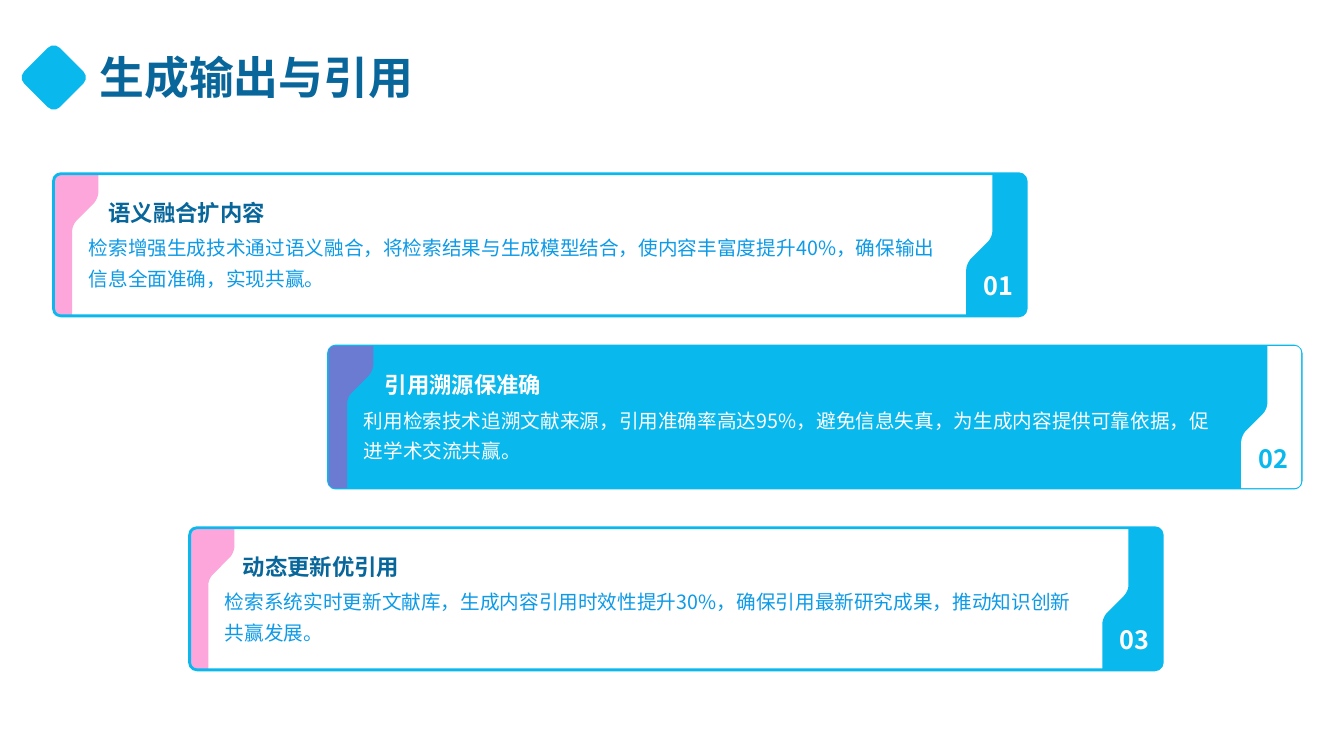
from lxml.etree import SubElement
from pptx import Presentation
from pptx.dml.color import RGBColor
from pptx.enum.shapes import MSO_SHAPE
from pptx.enum.text import MSO_ANCHOR, PP_ALIGN
from pptx.oxml.ns import qn
from pptx.util import Cm, Pt

FONT = "Noto Sans CJK SC"
CYAN = RGBColor(0x09, 0xB8, 0xED)
NAVY = RGBColor(0x08, 0x66, 0x9A)
BLUE = RGBColor(0x0D, 0x9A, 0xE7)
PINK = RGBColor(0xFC, 0x21, 0xA7)
WHITE = RGBColor(0xFF, 0xFF, 0xFF)

TITLE = "生成输出与引用"
# left, top, indent of the heading, solid card, heading, body
CARDS = [
    (1.35, 4.38, 1.14, False, "语义融合扩内容",
     "检索增强生成技术通过语义融合，将检索结果与生成模型结合，使内容丰富度提升40%，确保输出信息全面准确，实现共赢。"),
    (8.28, 8.72, 1.17, True, "引用溯源保准确",
     "利用检索技术追溯文献来源，引用准确率高达95%，避免信息失真，为生成内容提供可靠依据，促进学术交流共赢。"),
    (4.78, 13.3, 1.09, False, "动态更新优引用",
     "检索系统实时更新文献库，生成内容引用时效性提升30%，确保引用最新研究成果，推动知识创新共赢发展。"),
]
WIDE, HIGH = 24.51, 3.58

deck = Presentation()
deck.slide_width, deck.slide_height = Cm(33.87), Cm(19.05)
slide = deck.slides.add_slide(deck.slide_layouts[6])
shapes = slide.shapes


def add_text(text, x, y, w, h, size, color, bold=False,
             anchor=MSO_ANCHOR.MIDDLE, align=PP_ALIGN.LEFT, lines=None, after=None):
    frame = shapes.add_textbox(Cm(x), Cm(y), Cm(w), Cm(h)).text_frame
    frame.word_wrap = True
    frame.vertical_anchor = anchor
    para = frame.paragraphs[0]
    para.alignment = align
    para.line_spacing = lines
    if after:
        para.space_after = Pt(after)
    run = para.add_run()
    run.text = text
    font = run.font
    font.name, font.size, font.bold = FONT, Pt(size), bold
    font.color.rgb = color
    SubElement(run._r.get_or_add_rPr(), qn("a:ea"), typeface=FONT)


def paint(shape, fill=None, line=None, alpha=None):
    shape.shadow.inherit = False
    if fill is None:
        shape.fill.background()
    else:
        shape.fill.solid()
        shape.fill.fore_color.rgb = fill
    if alpha:
        color = shape.fill._xPr.find(".//" + qn("a:srgbClr"))
        SubElement(color, qn("a:alpha"), val=str(alpha * 1000))
    if line is None:
        shape.line.fill.background()
    else:
        shape.line.color.rgb = line
        shape.line.width = Pt(2)


def add_box(x, y, w, h, round_by, **look):
    box = shapes.add_shape(MSO_SHAPE.ROUNDED_RECTANGLE, Cm(x), Cm(y), Cm(w), Cm(h))
    box.adjustments[0] = round_by
    paint(box, **look)
    return box


def curve(a, b, c, d, steps=8):
    """Points along a cubic Bezier curve from a to d."""
    def at(t):
        u = 1 - t
        parts = zip(a, b, c, d)
        return tuple(u**3 * p + 3 * u * u * t * q + 3 * u * t * t * r + t**3 * s
                     for p, q, r, s in parts)
    return [at(i / steps) for i in range(steps + 1)]


def tab_edge(grow, drop):
    """Outline of a tab; grow widens it and drop lowers its slanted step."""
    slim, full = 0.47 + grow, 1.13 + grow
    return [
        *curve((0.17, 0), (0.07, 0), (0, 0.07), (0, 0.17)),
        *curve((0, HIGH - 0.17), (0, HIGH - 0.07), (0.07, HIGH), (0.17, HIGH)),
        (slim, HIGH),
        *curve((slim, 1.45 + drop), (slim, 1.35 + drop),
               (slim + 0.05, 1.24 + drop), (slim + 0.12, 1.17 + drop)),
        *curve((full - 0.11, 0.74 + drop), (full - 0.05, 0.67 + drop),
               (full, 0.55 + drop), (full, 0.46 + drop)),
        (full, 0),
    ]


def add_tab(points, **look):
    spots = [(Cm(x), Cm(y)) for x, y in points]
    pen = shapes.build_freeform(*spots[0])
    pen.add_line_segments(spots[1:], close=True)
    paint(pen.convert_to_shape(), **look)


def add_card(num, x, y, indent, solid, head, body):
    left = [(x + a, y + b) for a, b in tab_edge(0, 0)]
    # The right tab is a wider left tab turned by half a circle.
    right = [(x + WIDE - a, y + HIGH - b) for a, b in tab_edge(0.38, 0.69)]

    if not solid:
        add_tab(left, fill=PINK, alpha=40)
    add_box(x, y, WIDE, HIGH, 0.051, fill=CYAN if solid else None, line=CYAN)
    if solid:
        add_tab(left, fill=PINK, alpha=40)
    add_tab(right, fill=WHITE if solid else CYAN)

    add_text(f"{num:02}", x + 22.99, y + 2.31, 1.65, 1.02, 18,
             CYAN if solid else WHITE, bold=True, align=PP_ALIGN.CENTER)
    add_text(body, x + 0.64, y + 1.27, 22.25, 2.46, 14, WHITE if solid else BLUE,
             anchor=MSO_ANCHOR.TOP, lines=1.3, after=3)
    add_text(head, x + indent, y + 0.46, 10, 1.02, 16,
             WHITE if solid else NAVY, bold=True)


for num, card in enumerate(CARDS, 1):
    add_card(num, *card)
add_box(0.72, 1.32, 1.27, 1.27, 0.167, fill=CYAN).rotation = 45
add_text(TITLE, 2.26, 0.79, 26.24, 2.01, 32, NAVY, bold=True, lines=1.2)

deck.save("out.pptx")
